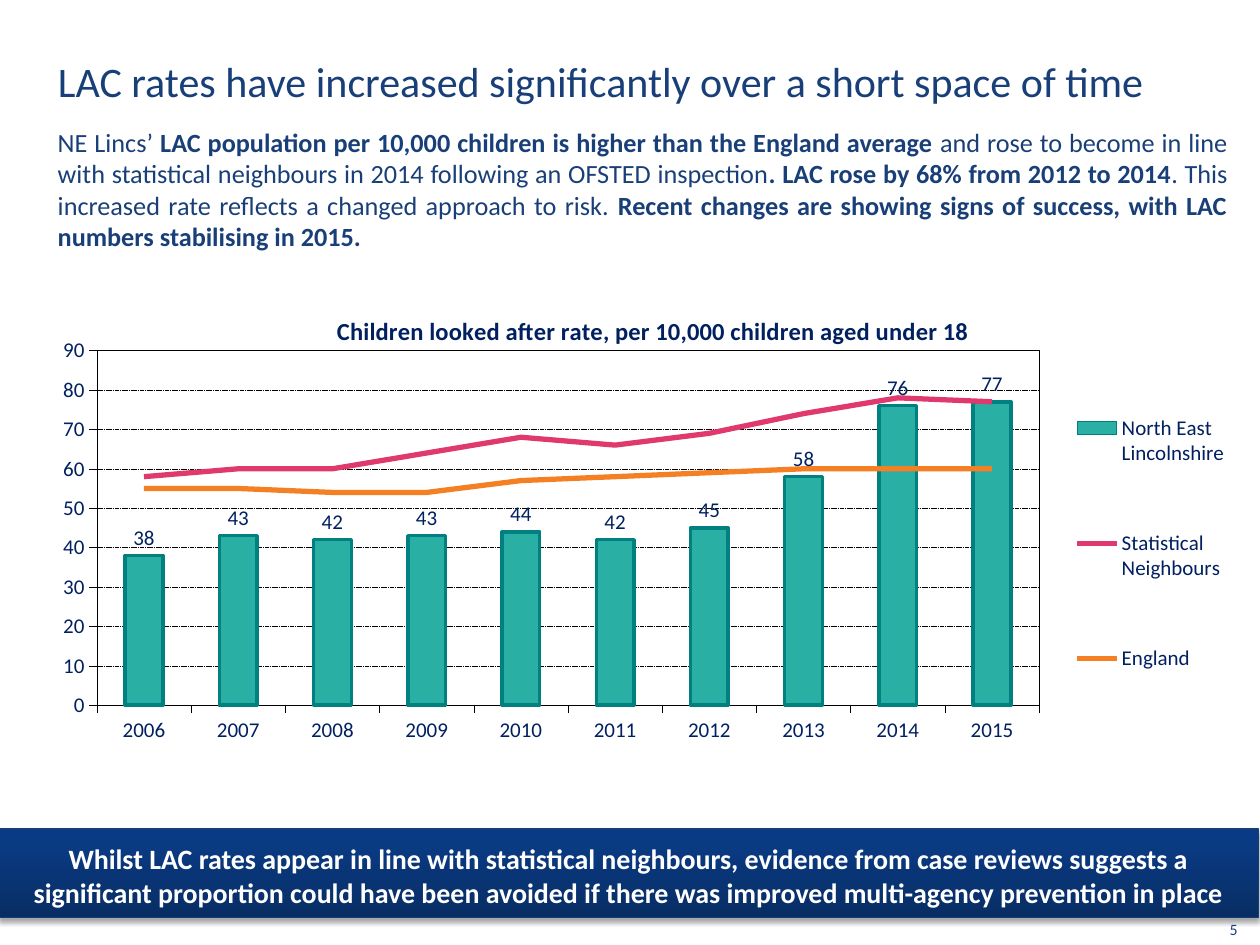
from copy import deepcopy

from lxml import etree
from pptx import Presentation
from pptx.chart.data import CategoryChartData
from pptx.dml.color import RGBColor
from pptx.enum.chart import XL_CHART_TYPE, XL_LABEL_POSITION, XL_LEGEND_POSITION, XL_TICK_MARK
from pptx.enum.dml import MSO_LINE
from pptx.enum.shapes import MSO_SHAPE
from pptx.enum.text import MSO_ANCHOR, MSO_AUTO_SIZE, PP_ALIGN
from pptx.oxml import parse_xml
from pptx.oxml.ns import qn
from pptx.util import Inches, Pt

COLUMNS, ROWS = 100, 75
FONT = "Calibri"
BLUE, NAVY = RGBColor(0x19, 0x3F, 0x78), RGBColor(0x00, 0x20, 0x60)
WHITE, BLACK = RGBColor(0xFF, 0xFF, 0xFF), RGBColor(0, 0, 0)
TEAL, DARK_TEAL = RGBColor(0x29, 0xAF, 0xA4), RGBColor(0x00, 0x80, 0x80)
PINK, ORANGE = RGBColor(0xE0, 0x39, 0x6E), RGBColor(0xF5, 0x80, 0x23)
BAND_LINE = RGBColor(0x16, 0x3D, 0x78)
BAND_STOPS = [(0, RGBColor(0x08, 0x2D, 0x64)), (0.8, RGBColor(0x0A, 0x3A, 0x82)),
              (1, RGBColor(0x08, 0x3A, 0x85))]
LEFT, CENTER, JUSTIFY = PP_ALIGN.LEFT, PP_ALIGN.CENTER, PP_ALIGN.JUSTIFY
TOP, MIDDLE = MSO_ANCHOR.TOP, MSO_ANCHOR.MIDDLE
CLUSTERED, OUTSIDE_END = XL_CHART_TYPE.COLUMN_CLUSTERED, XL_LABEL_POSITION.OUTSIDE_END
LEGEND_BOTTOM, TICK_OUT = XL_LEGEND_POSITION.BOTTOM, XL_TICK_MARK.OUTSIDE
DASH, RECTANGLE, NO_FIT = MSO_LINE.SQUARE_DOT, MSO_SHAPE.RECTANGLE, MSO_AUTO_SIZE.NONE
C_NS = 'xmlns:c="http://schemas.openxmlformats.org/drawingml/2006/chart"'
A_NS = 'xmlns:a="http://schemas.openxmlformats.org/drawingml/2006/main"'

TITLE = "LAC rates have increased significantly over a short space of time"
INTRO = [
    ("NE Lincs’ ", False),
    ("LAC population per 10,000 children is higher than the England average ", True),
    ("and rose to become in line with statistical neighbours in 2014 following an OFSTED inspection", False),
    (". LAC rose by 68% from 2012 to 2014", True),
    (". This increased rate reflects a changed approach to risk. ", False),
    ("Recent changes are showing signs of success, with LAC numbers stabilising in 2015.", True),
]
CHART_TITLE = "Children looked after rate, per 10,000 children aged under 18"
RATES = {
    "North East Lincolnshire": [38, 43, 42, 43, 44, 42, 45, 58, 76, 77],
    "Statistical Neighbours": [58, 60, 60, 64, 68, 66, 69, 74, 78, 77],
    "England": [55, 55, 54, 54, 57, 58, 59, 60, 60, 60],
}
CONCLUSION = ("Whilst LAC rates appear in line with statistical neighbours, evidence from case "
              "reviews suggests a significant proportion could have been avoided if there was "
              "improved multi-agency prevention in place")


def write(p, text, size=12, color=BLUE, bold=False, align=None):
    """Add a formatted run to a paragraph."""
    r = p.add_run()
    r.text = text
    r.font.name, r.font.size, r.font.bold = FONT, Pt(size), bold
    r.font.color.rgb = color
    if align is not None:
        p.alignment = align


def set_line(line, color, width):
    """Set the colour and point width of a line."""
    line.color.rgb = color
    line.width = Pt(width)


def manual_layout(x, y, w=None, h=None, inner=False):
    """Return a chart layout element given in shares of the chart."""
    sizes = [(k, v) for k, v in zip("xywh", (x, y, w, h)) if v is not None]
    target = '<c:layoutTarget val="inner"/>' if inner else ""
    modes = "".join(f'<c:{k}Mode val="edge"/>' for k in "xy")
    values = "".join(f'<c:{k} val="{v}"/>' for k, v in sizes)
    return parse_xml(f"<c:layout {C_NS}><c:manualLayout>{target}{modes}{values}"
                     "</c:manualLayout></c:layout>")


def place(parent, layout, after=None):
    """Replace the layout of a chart part."""
    for old in parent.findall(qn("c:layout")):
        parent.remove(old)
    index = 0 if after is None else parent.index(parent.find(qn(after))) + 1
    parent.insert(index, layout)


def bars_to_lines(chart):
    """Move every series but the first to a line plot on the same axes."""
    bar = chart.plots[0]._element
    lines = parse_xml(f'<c:lineChart {C_NS}><c:grouping val="standard"/>'
                      '<c:varyColors val="0"/></c:lineChart>')
    for ser in bar.findall(qn("c:ser"))[1:]:
        for invert in ser.findall(qn("c:invertIfNegative")):
            ser.remove(invert)
        marker = parse_xml(f'<c:marker {C_NS}><c:symbol val="none"/></c:marker>')
        ser.find(qn("c:spPr")).addnext(marker)
        etree.SubElement(ser, qn("c:smooth")).set("val", "0")
        lines.append(ser)
    etree.SubElement(lines, qn("c:marker")).set("val", "1")
    for axis in bar.findall(qn("c:axId")):
        lines.append(deepcopy(axis))
    bar.addnext(lines)


class Deck:
    """Hold the presentation, its grid and the current slide."""

    def __init__(self):
        self.prs = Presentation()
        self.prs.slide_width, self.prs.slide_height = Inches(10), Inches(7.5)
        self.s = self.prs.slides.add_slide(self.prs.slide_layouts[5])

    def box(self, col, row, cols, rows):
        """Turn grid cells into left, top, width and height."""
        x, y = self.prs.slide_width / COLUMNS, self.prs.slide_height / ROWS
        return int(col * x), int(row * y), int(cols * x), int(rows * y)

    def title(self, text, *cells):
        """Fill and place the title placeholder."""
        sp = self.s.shapes.title
        sp.left, sp.top, sp.width, sp.height = self.box(*cells)
        tf = sp.text_frame
        tf.auto_size, tf.vertical_anchor = NO_FIT, TOP
        tf.margin_top, tf.margin_bottom = Inches(0.47), Inches(0.04)
        tf.paragraphs[0].line_spacing = 0.95
        write(tf.paragraphs[0], text, size=24, align=LEFT)

    def text(self, runs, *cells, size=15, align=LEFT, wrap=True):
        """Add a text box of plain and bold runs."""
        tf = self.s.shapes.add_textbox(*self.box(*cells)).text_frame
        tf.word_wrap = wrap
        for text, bold in runs:
            write(tf.paragraphs[0], text, size=size, bold=bold, align=align)

    def band(self, text, *cells):
        """Add a gradient band with a soft shadow and bold text."""
        sp = self.s.shapes.add_shape(RECTANGLE, *self.box(*cells))
        sp.fill.gradient()
        sp.fill.gradient_angle = 90
        stops = sp._element.spPr.find(qn("a:gradFill")).find(qn("a:gsLst"))
        stops.append(deepcopy(stops[-1]))
        for stop, (position, color) in zip(sp.fill.gradient_stops, BAND_STOPS):
            stop.position, stop.color.rgb = position, color
        set_line(sp.line, BAND_LINE, 0.75)
        sp.shadow.inherit = False
        sp._element.spPr.find(qn("a:effectLst")).append(parse_xml(
            f'<a:outerShdw {A_NS} blurRad="{Pt(3.1)}" dist="{Pt(1.8)}" dir="5400000" '
            'rotWithShape="0"><a:srgbClr val="000000"><a:alpha val="35000"/>'
            "</a:srgbClr></a:outerShdw>"))
        tf = sp.text_frame
        tf.word_wrap, tf.vertical_anchor = True, MIDDLE
        tf.margin_top, tf.margin_bottom = Inches(0.08), Inches(0.05)
        write(tf.paragraphs[0], text, size=16, color=WHITE, bold=True, align=CENTER)

    def chart(self, title, years, rates, *cells):
        """Add columns for the first series and lines for the others."""
        data = CategoryChartData(number_format="0")
        data.categories = years
        for name, values in rates.items():
            data.add_series(name, values)
        chart = self.s.shapes.add_chart(CLUSTERED, *self.box(*cells), data).chart
        chart.font.name, chart.font.size = FONT, Pt(12)
        chart.font.color.rgb = NAVY
        write(chart.chart_title.text_frame.paragraphs[0], title, size=14, color=NAVY, bold=True)
        place(chart.chart_title._element, manual_layout(0.26, 0.08), after="c:tx")
        chart.has_legend = True
        chart.legend.position, chart.legend.include_in_layout = LEGEND_BOTTOM, False
        place(chart.legend._element, manual_layout(0.85, 0.16, 0.14, 0.75), after="c:legendPos")
        for axis in (chart.category_axis, chart.value_axis):
            axis.major_tick_mark = TICK_OUT
            set_line(axis.format.line, BLACK, 0.25)
        axis = chart.value_axis
        axis.minimum_scale, axis.maximum_scale, axis.major_unit = 0, 90, 10
        set_line(axis.major_gridlines.format.line, BLACK, 0.25)
        axis.major_gridlines.format.line.dash_style = DASH
        plot = chart.plots[0]
        plot.gap_width, plot.vary_by_categories = 150, False
        columns, *lines = plot.series
        columns.format.fill.solid()
        columns.format.fill.fore_color.rgb = TEAL
        set_line(columns.format.line, DARK_TEAL, 2)
        labels = columns.data_labels
        labels.show_value, labels.position = True, OUTSIDE_END
        for series, color in zip(lines, (PINK, ORANGE)):
            set_line(series.format.line, color, 3)
        bars_to_lines(chart)
        area = chart._chartSpace.chart.plotArea
        place(area, manual_layout(0.07, 0.16, 0.76, 0.69, inner=True))
        area.append(parse_xml(
            f'<c:spPr {C_NS} {A_NS}><a:solidFill><a:srgbClr val="{WHITE}"/></a:solidFill>'
            f'<a:ln w="{Pt(0.25)}"><a:solidFill><a:srgbClr val="{BLACK}"/></a:solidFill>'
            "</a:ln></c:spPr>"))


def main():
    """Build and save the slide."""
    deck = Deck()
    deck.title(TITLE, 3.6, 0, 96, 8.4)
    deck.chart(CHART_TITLE, [str(y) for y in range(2006, 2016)], RATES, 0.8, 21.3, 98.4, 40.8)
    deck.band(CONCLUSION, -0.1, 65.8, 100, 7)
    deck.text(INTRO, 3.6, 9.5, 94.8, 11.1, align=JUSTIFY)
    deck.text([("5", False)], 96.6, 72.5, 3.5, 2.5, size=9, wrap=False)
    deck.prs.save("out.pptx")


if __name__ == "__main__":
    main()
